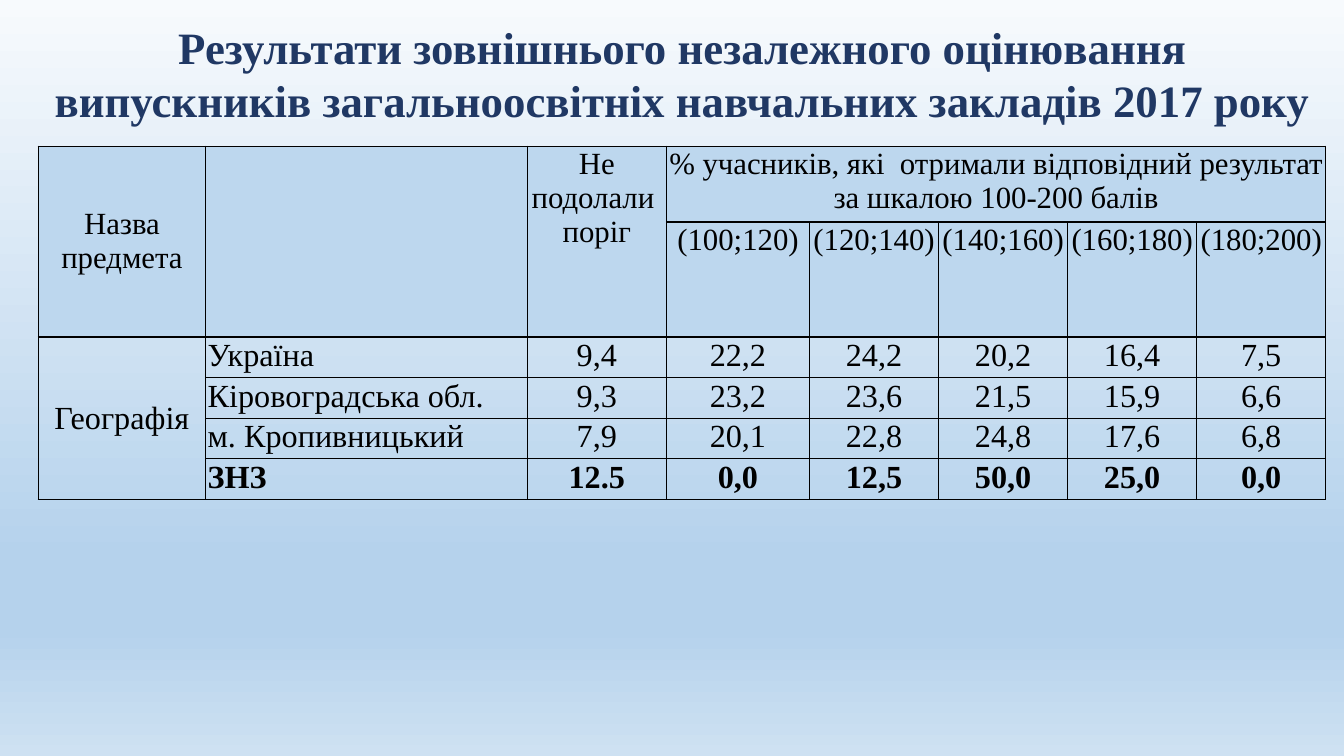
from lxml.etree import SubElement
from pptx import Presentation
from pptx.dml.color import RGBColor as RGB
from pptx.enum.text import MSO_ANCHOR as ANCHOR, PP_ALIGN as ALIGN
from pptx.oxml.ns import qn
from pptx.util import Inches, Pt

COLORS = {"title": "203864", "text": "000000", "border": "000000", "header": "BDD7EE"}
GRADIENT = [(0, "F7FAFD"), (74, "B5D2EC"), (83, "B5D2EC"), (100, "CEE1F2")]
FONT = "Times New Roman"

# Grid in inches
LEFT, TOP, WIDTH = 0.38, 1.45, 12.78
COLS = [1.66, 3.19, 1.38, 1.42] + [1.28] * 4
ROWS = [0.7, 1.14] + [0.38] * 4

TITLE = ("Результати зовнішнього незалежного оцінювання\v"
         "випускників загальноосвітніх навчальних закладів 2017 року")
HEADERS = [
    ["Назва\nпредмета", "", "Не подолали  поріг",
     "% учасників, які  отримали відповідний результат \nза шкалою 100-200 балів"],
    ["", "", ""] + [f"({low};{low + 20})" for low in range(100, 200, 20)],
]
RESULTS = [
    ["Географія", "Україна", "9,4", "22,2", "24,2", "20,2", "16,4", "7,5"],
    ["", "Кіровоградська обл.", "9,3", "23,2", "23,6", "21,5", "15,9", "6,6"],
    ["", "м. Кропивницький", "7,9", "20,1", "22,8", "24,8", "17,6", "6,8"],
    ["", "ЗНЗ", "12.5", "0,0", "12,5", "50,0", "25,0", "0,0"],
]
# First row, first column, last row, last column
MERGES = [(0, 0, 1, 0), (0, 1, 1, 1), (0, 2, 1, 2), (0, 3, 0, 7), (2, 0, 5, 0)]


def set_background(s):
    fill = s.background.fill
    fill.gradient()
    fill.gradient_angle = 270
    stops = s._element.find(".//" + qn("a:gsLst"))
    for stop in list(stops):
        stops.remove(stop)
    for share, color in GRADIENT:
        stop = SubElement(stops, qn("a:gs"), pos=str(share * 1000))
        SubElement(stop, qn("a:srgbClr"), val=color)


def write(tf, text, size, color, bold=False, align=ALIGN.CENTER):
    tf.text = text
    for p in tf.paragraphs:
        p.alignment = align
        p.font.size = Pt(size)
        for r in p.runs:
            r.font.name, r.font.size, r.font.bold = FONT, Pt(size), bold
            r.font.color.rgb = RGB.from_string(color)


def add_title(s):
    tf = s.shapes.add_textbox(Inches(LEFT), 0, Inches(WIDTH), Inches(TOP)).text_frame
    tf.word_wrap = True
    tf.vertical_anchor = ANCHOR.MIDDLE
    write(tf, TITLE, 32, COLORS["title"], bold=True)


def add_borders(cell):
    tc_pr = cell._tc.get_or_add_tcPr()
    for i, side in enumerate(("lnL", "lnR", "lnT", "lnB")):
        line = tc_pr.makeelement(qn("a:" + side), {"w": str(Pt(1))})
        fill = SubElement(line, qn("a:solidFill"))
        SubElement(fill, qn("a:srgbClr"), val=COLORS["border"])
        tc_pr.insert(i, line)


def format_cell(cell, row, col):
    cell.margin_left = cell.margin_right = Inches(0.02)
    cell.margin_top = cell.margin_bottom = Inches(0.01)
    cell.vertical_anchor = ANCHOR.MIDDLE if col == 0 else ANCHOR.TOP
    if row < len(HEADERS):
        cell.fill.solid()
        cell.fill.fore_color.rgb = RGB.from_string(COLORS["header"])
    else:
        cell.fill.background()
    add_borders(cell)


def add_results(s):
    table = s.shapes.add_table(len(ROWS), len(COLS), Inches(LEFT), Inches(TOP),
                               Inches(WIDTH), Inches(sum(ROWS))).table
    table.first_row = table.horz_banding = False
    for column, width in zip(table.columns, COLS):
        column.width = Inches(width)
    for table_row, height in zip(table.rows, ROWS):
        table_row.height = Inches(height)
    for r1, c1, r2, c2 in MERGES:
        table.cell(r1, c1).merge(table.cell(r2, c2))

    for row in range(len(ROWS)):
        for col in range(len(COLS)):
            format_cell(table.cell(row, col), row, col)
    for row, texts in enumerate(HEADERS + RESULTS):
        size = 22 if row < len(HEADERS) else 23
        for col, text in enumerate(texts):
            if text:
                place_name = col == 1
                write(table.cell(row, col).text_frame, text, size, COLORS["text"],
                      bold=row == len(ROWS) - 1,
                      align=ALIGN.LEFT if place_name else ALIGN.CENTER)


def main():
    prs = Presentation()
    prs.slide_width, prs.slide_height = Inches(13.33), Inches(7.5)
    s = prs.slides.add_slide(prs.slide_layouts[6])
    set_background(s)
    add_title(s)
    add_results(s)
    prs.save("out.pptx")


if __name__ == "__main__":
    main()
